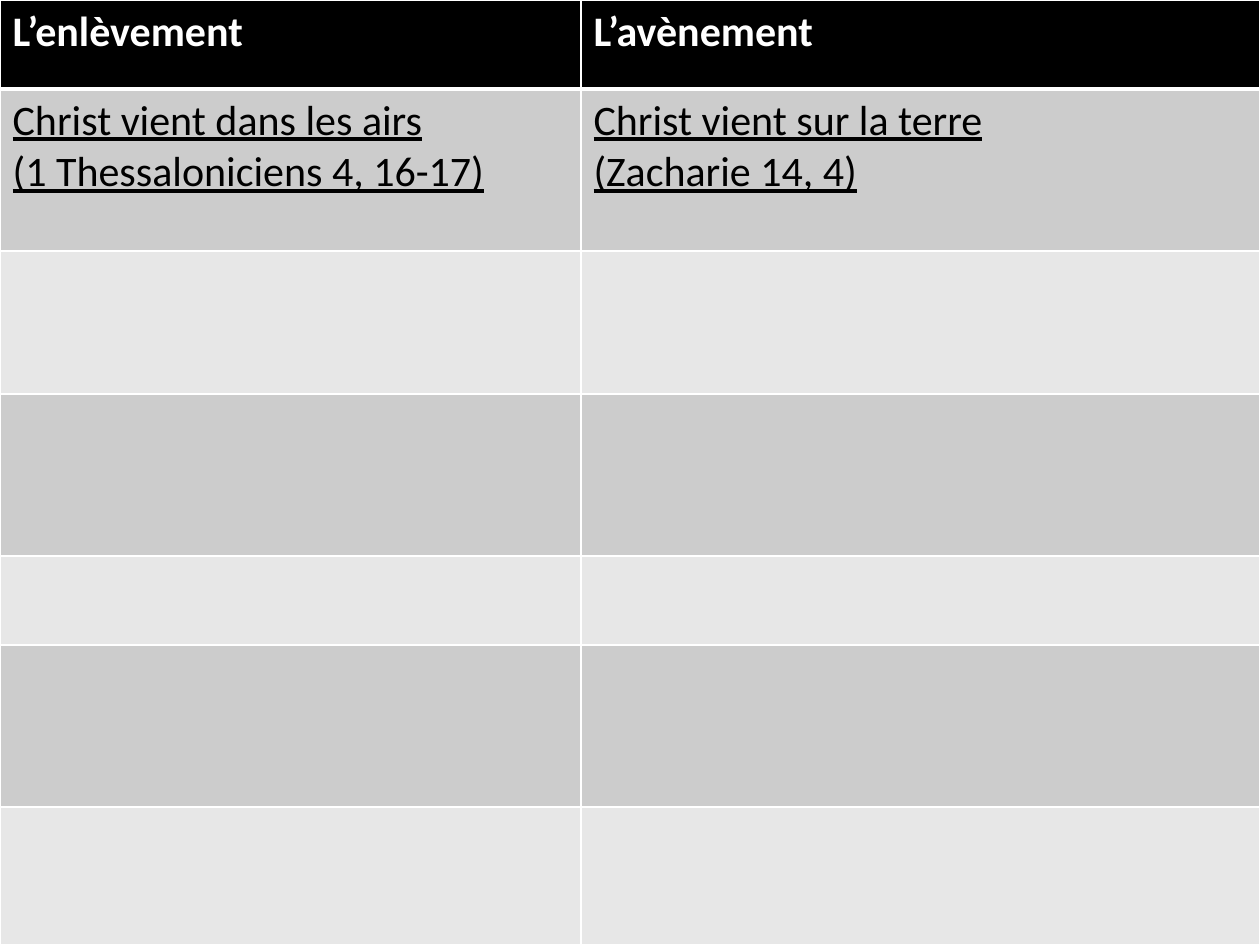
import pptx
import pptx.dml.color
import pptx.oxml.ns
import pptx.util
from lxml import etree

EMU_PER_PX = 914400 // 126
SLIDE_WIDTH, SLIDE_HEIGHT = 1260, 945

COLORS = {
    "header": "000000",
    "dark_band": "CCCCCC",
    "light_band": "E7E7E7",
    "border": "FFFFFF",
    "header_text": "FFFFFF",
    "body_text": "000000",
}

COLUMN_WIDTHS = [581, 679]
ROW_HEIGHTS = [89, 162, 143, 162, 89, 162, 138]
HEADINGS = ["L’enlèvement", "L’avènement"]
FIRST_COMPARISON = [
    "Christ vient dans les airs\n(1 Thessaloniciens 4, 16-17)",
    "Christ vient sur la terre\n(Zacharie 14, 4)",
]


def px(length):
    return pptx.util.Emu(length * EMU_PER_PX)


def rgb(name):
    return pptx.dml.color.RGBColor.from_string(COLORS[name])


class SlideBuilder:
    font_name = "Calibri"
    font_size = 24

    def __init__(self, slide):
        self.slide = slide

    def table(self, left, top, column_widths, row_heights):
        shape = self.slide.shapes.add_table(
            len(row_heights), len(column_widths), px(left), px(top),
            px(sum(column_widths)), px(sum(row_heights)))
        table = shape.table
        table.first_row = False
        table.horz_banding = False
        for column, width in zip(table.columns, column_widths):
            column.width = px(width)
        for row, height in zip(table.rows, row_heights):
            row.height = px(height)
        return table

    def cell(self, cell, fill, top=1, bottom=1):
        # Borders precede the fill in the cell properties
        properties = cell._tc.get_or_add_tcPr()
        widths = {"lnL": 1, "lnR": 1, "lnT": top, "lnB": bottom}
        for side, width in widths.items():
            line = etree.SubElement(properties, pptx.oxml.ns.qn(f"a:{side}"),
                                    w=str(pptx.util.Pt(width)))
            solid = etree.SubElement(line, pptx.oxml.ns.qn("a:solidFill"))
            etree.SubElement(solid, pptx.oxml.ns.qn("a:srgbClr"),
                             val=COLORS["border"])
        cell.fill.solid()
        cell.fill.fore_color.rgb = rgb(fill)

    def text(self, cell, text, color, bold=False, underline=False):
        cell.text_frame.text = text
        for paragraph in cell.text_frame.paragraphs:
            for run in paragraph.runs:
                run.font.name = self.font_name
                run.font.size = pptx.util.Pt(self.font_size)
                run.font.bold = bold
                run.font.underline = underline
                run.font.color.rgb = rgb(color)


def main():
    presentation = pptx.Presentation()
    presentation.slide_width = px(SLIDE_WIDTH)
    presentation.slide_height = px(SLIDE_HEIGHT)
    slide = presentation.slides.add_slide(presentation.slide_layouts[6])
    builder = SlideBuilder(slide)

    # Comparison grid: header row, then alternating bands
    table = builder.table(0, 0, COLUMN_WIDTHS, ROW_HEIGHTS)
    for index, row in enumerate(table.rows):
        band = "dark_band" if index % 2 else "light_band"
        for cell in row.cells:
            builder.cell(cell, "header" if index == 0 else band,
                         top=3 if index == 1 else 1,
                         bottom=3 if index == 0 else 1)

    # Headings and the first comparison
    for column, (heading, comparison) in enumerate(
            zip(HEADINGS, FIRST_COMPARISON)):
        builder.text(table.cell(0, column), heading, "header_text", bold=True)
        builder.text(table.cell(1, column), comparison, "body_text",
                     underline=True)

    presentation.save("out.pptx")


if __name__ == "__main__":
    main()
